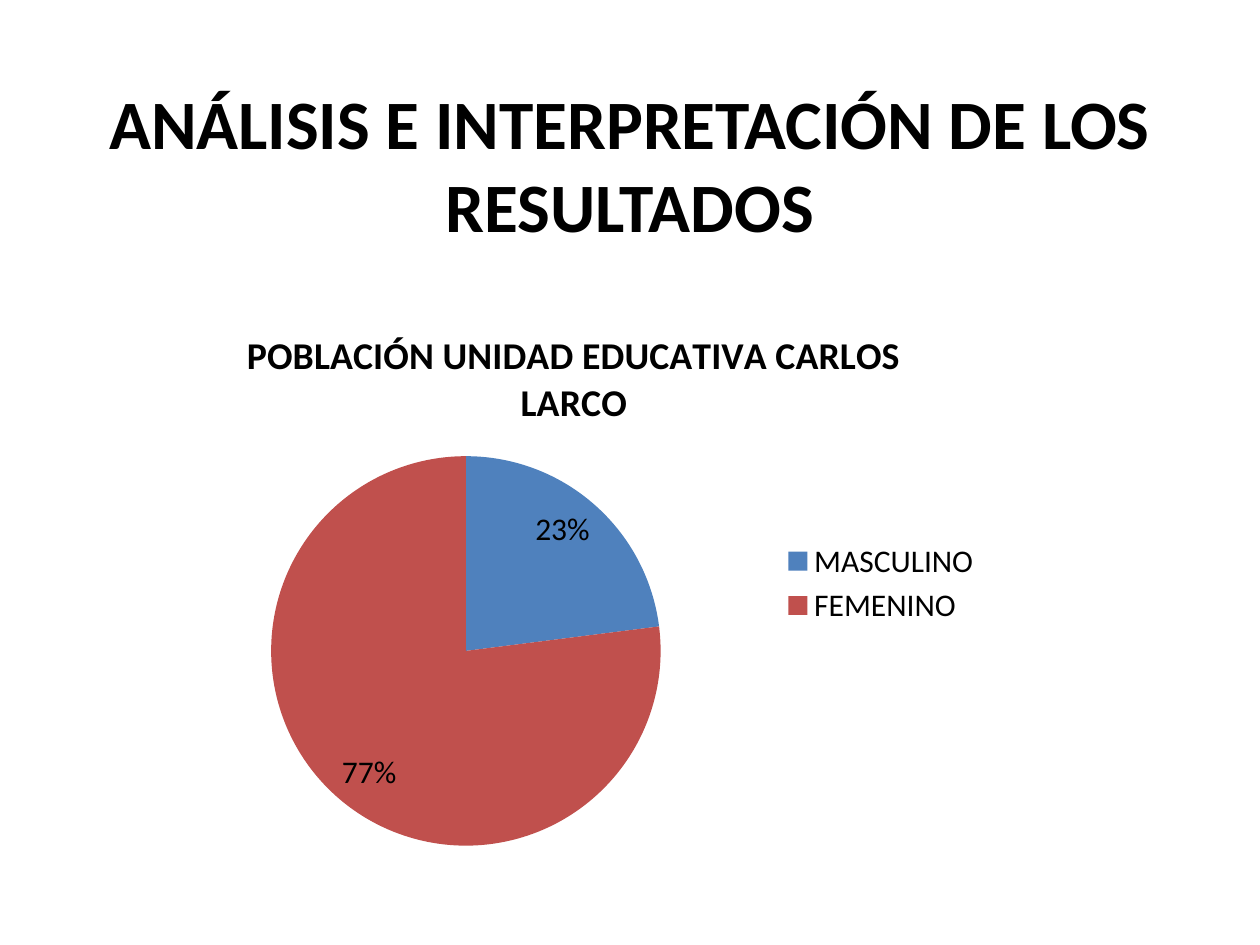
from pptx import Presentation
from pptx.chart.data import CategoryChartData
from pptx.dml.color import RGBColor
from pptx.enum.chart import XL_CHART_TYPE as Kind, XL_LABEL_POSITION as Spot
from pptx.enum.chart import XL_LEGEND_POSITION as Side
from pptx.enum.text import MSO_ANCHOR as Anchor, PP_ALIGN as Align
from pptx.util import Inches, Pt


def color(code):
    return RGBColor.from_string(code)


class Deck:
    face = "Calibri"
    ink = "000000"

    def __init__(self, slide):
        self.slide = slide

    def style(self, font, size, bold=False):
        font.name = self.face
        font.size = Pt(size)
        font.bold = bold
        font.color.rgb = color(self.ink)

    def title(self, text, box, size):
        frame = self.slide.shapes.add_textbox(*map(Inches, box)).text_frame
        frame.word_wrap = True
        frame.vertical_anchor = Anchor.MIDDLE
        line = frame.paragraphs[0]
        line.text = text
        line.alignment = Align.CENTER
        self.style(line.font, size, bold=True)

    def pie(self, name, parts, box, size):
        """Draw a titled pie; parts holds (label, share, colour) rows."""
        names, shares, fills = zip(*parts)
        data = CategoryChartData(number_format="0%")
        data.categories = names
        data.add_series(name, shares)
        chart = self.slide.shapes.add_chart(
            Kind.PIE, *map(Inches, box), data).chart
        self.style(chart.font, size)

        chart.has_title = True
        head = chart.chart_title.text_frame.paragraphs[0]
        head.text = name
        self.style(head.font, size * 1.2, bold=True)
        chart.chart_title.include_in_layout = False

        chart.has_legend = True
        chart.legend.position = Side.RIGHT
        chart.legend.include_in_layout = False

        plot = chart.plots[0]
        plot.vary_by_categories = True
        plot.has_data_labels = True
        tags = plot.data_labels
        tags.show_value = True
        tags.show_percentage = False
        tags.number_format = "0%"
        tags.number_format_is_linked = False
        tags.position = Spot.INSIDE_END
        self.style(tags.font, size)
        for i, fill in enumerate(fills):
            slice_fill = plot.series[0].points[i].format.fill
            slice_fill.solid()
            slice_fill.fore_color.rgb = color(fill)


def main():
    show = Presentation()
    show.slide_width, show.slide_height = Inches(10), Inches(7.5)
    deck = Deck(show.slides.add_slide(show.slide_layouts[6]))
    deck.title("ANÁLISIS E INTERPRETACIÓN DE LOS RESULTADOS",
               (0.5, 0.67, 9, 1.25), 39.6)
    deck.pie("POBLACIÓN UNIDAD EDUCATIVA CARLOS LARCO",
             [("MASCULINO", 0.23, "4F81BD"), ("FEMENINO", 0.77, "C0504D")],
             (1.22, 2.41, 6.67, 4.44), 18)
    show.save("out.pptx")


if __name__ == "__main__":
    main()
